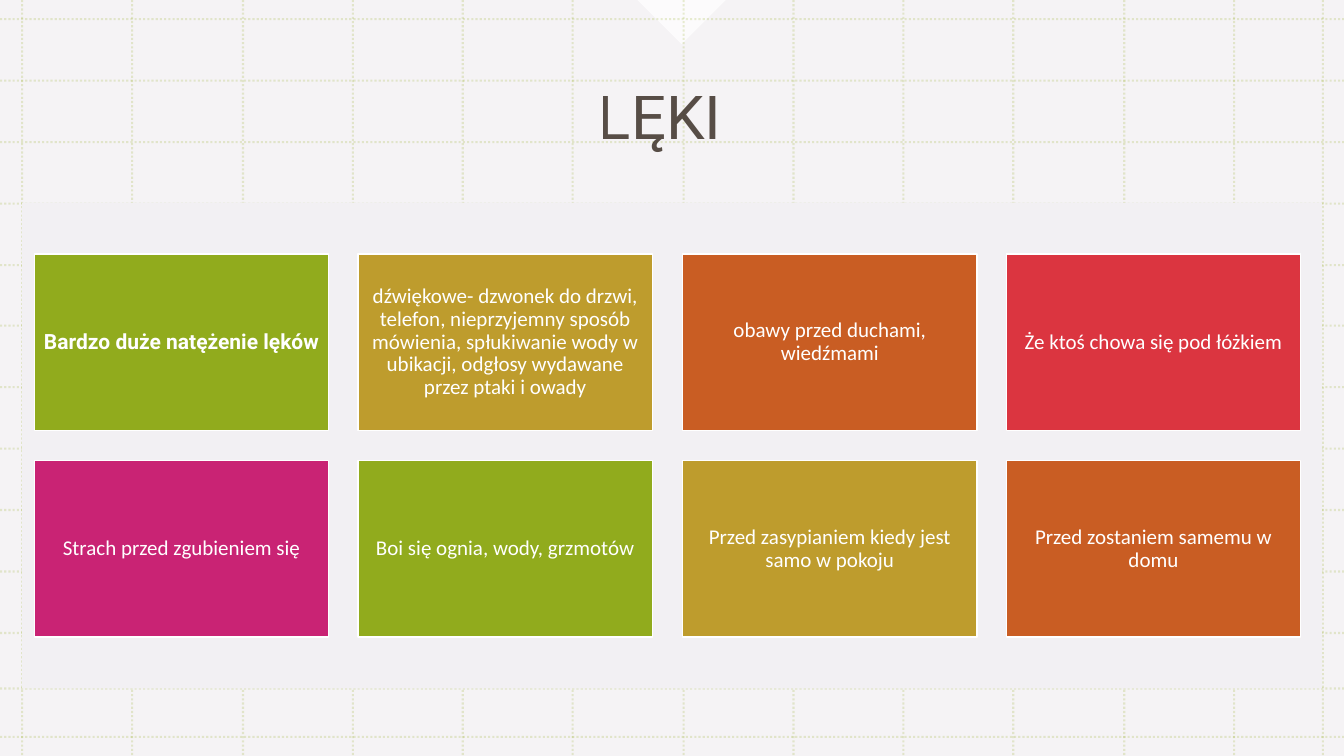
from dataclasses import dataclass

from lxml.etree import SubElement
from pptx import Presentation
from pptx.dml.color import RGBColor
from pptx.dml.fill import FillFormat
from pptx.enum.dml import MSO_LINE_DASH_STYLE as Dash
from pptx.enum.shapes import MSO_CONNECTOR as Connector
from pptx.enum.shapes import MSO_SHAPE as Preset
from pptx.enum.text import MSO_ANCHOR as Anchor
from pptx.enum.text import MSO_AUTO_SIZE as AutoSize
from pptx.enum.text import PP_ALIGN as Align
from pptx.oxml.ns import qn
from pptx.shapes.autoshape import Shape
from pptx.slide import Slide
from pptx.text.text import TextFrame
from pptx.util import Emu, Pt

EMU_PER_PX = 9144
SLIDE_WIDTH, SLIDE_HEIGHT = 1333, 750


@dataclass(frozen=True)
class Theme:
    white: str = "FFFFFF"
    backdrop: str = "F5F3F5"
    panel: str = "F2F0F3"
    heading: str = "30241B"
    green: str = "91AB1D"
    gold: str = "BE9C2D"
    orange: str = "C95D23"
    red: str = "DB3540"
    magenta: str = "C92374"
    heading_font: str = "Roboto"
    body_font: str = "Calibri"
    heading_size: int = 44
    body_size: int = 15


@dataclass(frozen=True)
class Box:
    left: int
    top: int
    width: int
    height: int


@dataclass(frozen=True)
class Fear:
    text: str
    color: str
    font: str
    bold: bool = False


THEME = Theme()
FEARS = [
    Fear("Bardzo duże natężenie lęków", THEME.green, THEME.heading_font, True),
    Fear(
        "dźwiękowe- dzwonek do drzwi, telefon, nieprzyjemny sposób mówienia, "
        "spłukiwanie wody w ubikacji, odgłosy wydawane przez ptaki i owady",
        THEME.gold,
        THEME.body_font,
    ),
    Fear("obawy przed duchami, wiedźmami", THEME.orange, THEME.body_font),
    Fear("Że ktoś chowa się pod łóżkiem", THEME.red, THEME.body_font),
    Fear("Strach przed zgubieniem się", THEME.magenta, THEME.body_font),
    Fear("Boi się ognia, wody, grzmotów", THEME.green, THEME.body_font),
    Fear("Przed zasypianiem kiedy jest samo w pokoju", THEME.gold, THEME.body_font),
    Fear("Przed zostaniem samemu w domu", THEME.orange, THEME.body_font),
]


def px(length: int) -> Emu:
    return Emu(length * EMU_PER_PX)


def paint(fill: FillFormat, color: str, opacity: int = 100) -> None:
    fill.solid()
    fill.fore_color.rgb = RGBColor.from_string(color)
    if opacity < 100:
        solid = fill._xPr.find(qn("a:solidFill"))
        SubElement(solid[0], qn("a:alpha"), val=str(opacity * 1000))


def write_text(
    frame: TextFrame,
    text: str,
    *,
    font: str,
    size: int,
    color: str,
    opacity: int = 100,
    bold: bool = False,
) -> None:
    frame.word_wrap = True
    frame.auto_size = AutoSize.NONE
    frame.vertical_anchor = Anchor.MIDDLE
    paragraph = frame.paragraphs[0]
    paragraph.alignment = Align.CENTER
    paragraph.line_spacing = 0.9
    run = paragraph.add_run()
    run.text = text
    run.font.name = font
    run.font.size = Pt(size)
    run.font.bold = bold
    paint(run.font.fill, color, opacity)


def add_block(
    slide: Slide,
    preset: Preset,
    box: Box,
    color: str,
    opacity: int = 100,
) -> Shape:
    block = slide.shapes.add_shape(
        preset, px(box.left), px(box.top), px(box.width), px(box.height)
    )
    block.shadow.inherit = False
    block.line.fill.background()
    paint(block.fill, color, opacity)
    return block


def add_grid_line(slide: Slide, start: tuple[int, int], end: tuple[int, int]) -> None:
    grid_line = slide.shapes.add_connector(
        Connector.STRAIGHT, px(start[0]), px(start[1]), px(end[0]), px(end[1])
    )
    grid_line.line.width = Pt(1.5)
    paint(grid_line.line.fill, THEME.green, 20)
    grid_line.line.dash_style = Dash.ROUND_DOT
    SubElement(grid_line._element.spPr, qn("a:effectLst"))


def add_grid(slide: Slide) -> None:
    columns = [22 + round(i * 1202 / 11) for i in range(12)] + [1312]
    rows = [19 + round(i * 60.9) for i in range(11)] + [683, 731]
    for x in columns:
        add_grid_line(slide, (x, 0), (x, SLIDE_HEIGHT))
    for y in rows:
        add_grid_line(slide, (0, y), (SLIDE_WIDTH, y))


def add_heading(slide: Slide) -> None:
    heading = slide.shapes.title
    heading.left, heading.top = px(33), px(37)
    heading.width, heading.height = px(1258), px(164)
    write_text(
        heading.text_frame,
        "LĘKI ",
        font=THEME.heading_font,
        size=THEME.heading_size,
        color=THEME.heading,
        opacity=80,
    )
    slide.shapes._spTree.append(heading._element)


def add_fear(slide: Slide, fear: Fear, box: Box) -> None:
    card = add_block(slide, Preset.RECTANGLE, box, fear.color)
    paint(card.line.fill, THEME.white)
    card.line.width = Pt(1)
    frame = card.text_frame
    frame.margin_left = frame.margin_right = px(6)
    frame.margin_top = frame.margin_bottom = px(6)
    write_text(
        frame,
        fear.text,
        font=fear.font,
        size=THEME.body_size,
        color=THEME.white,
        bold=fear.bold,
    )


def main() -> None:
    deck = Presentation()
    deck.slide_width, deck.slide_height = px(SLIDE_WIDTH), px(SLIDE_HEIGHT)
    slide = deck.slides.add_slide(deck.slide_layouts[5])
    paint(slide.background.fill, THEME.backdrop)

    pointer = add_block(
        slide, Preset.RIGHT_TRIANGLE, Box(645, -31, 62, 62), THEME.white, 75
    )
    pointer.rotation = 315
    add_grid(slide)
    add_block(slide, Preset.RECTANGLE, Box(22, 201, 1289, 482), THEME.panel)
    add_heading(slide)

    for index, fear in enumerate(FEARS):
        row, column = divmod(index, 4)
        left, top = 34 + round(column * 964 / 3), 252 + row * 205
        add_fear(slide, fear, Box(left, top, 292, 175))

    deck.save("out.pptx")


if __name__ == "__main__":
    main()
